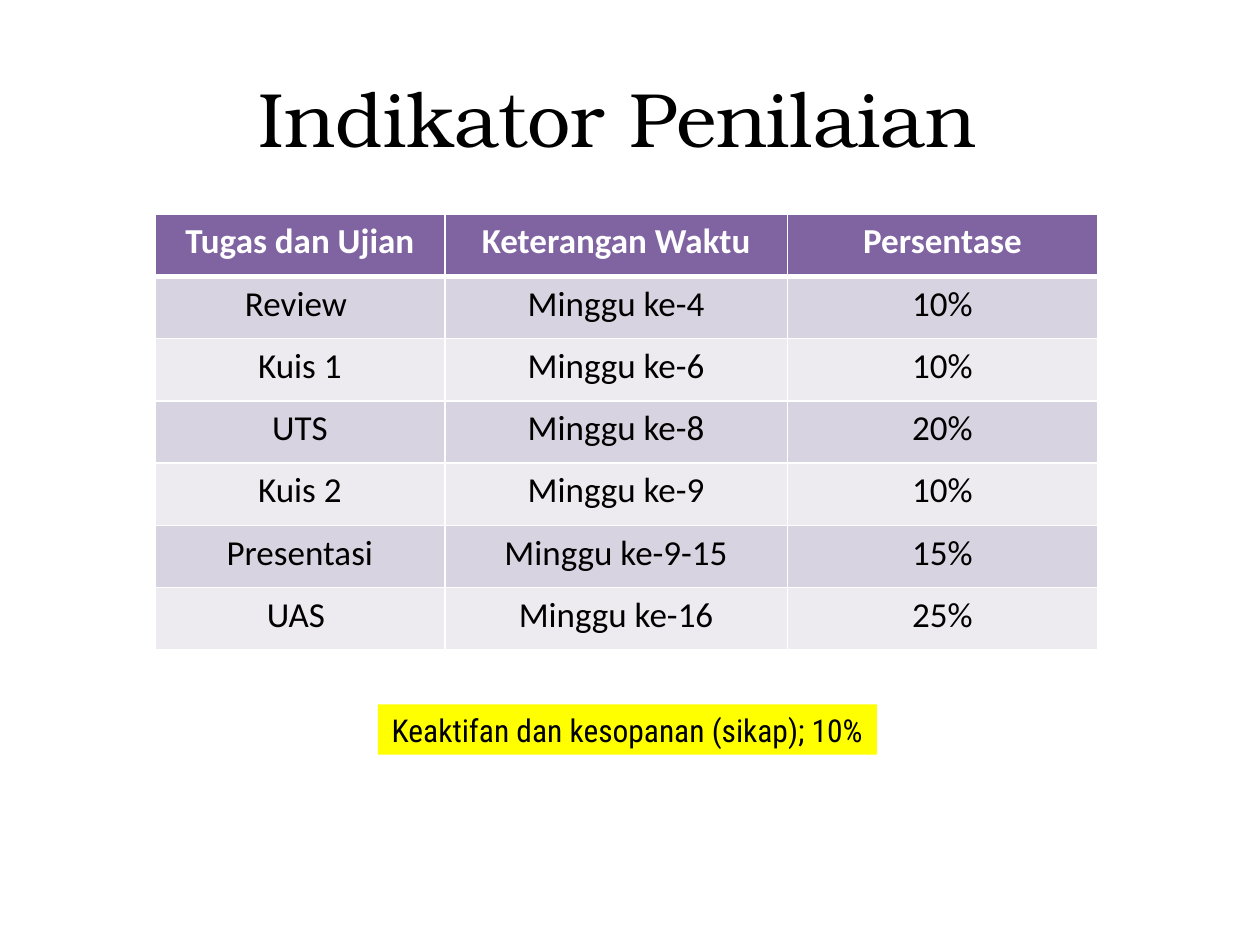
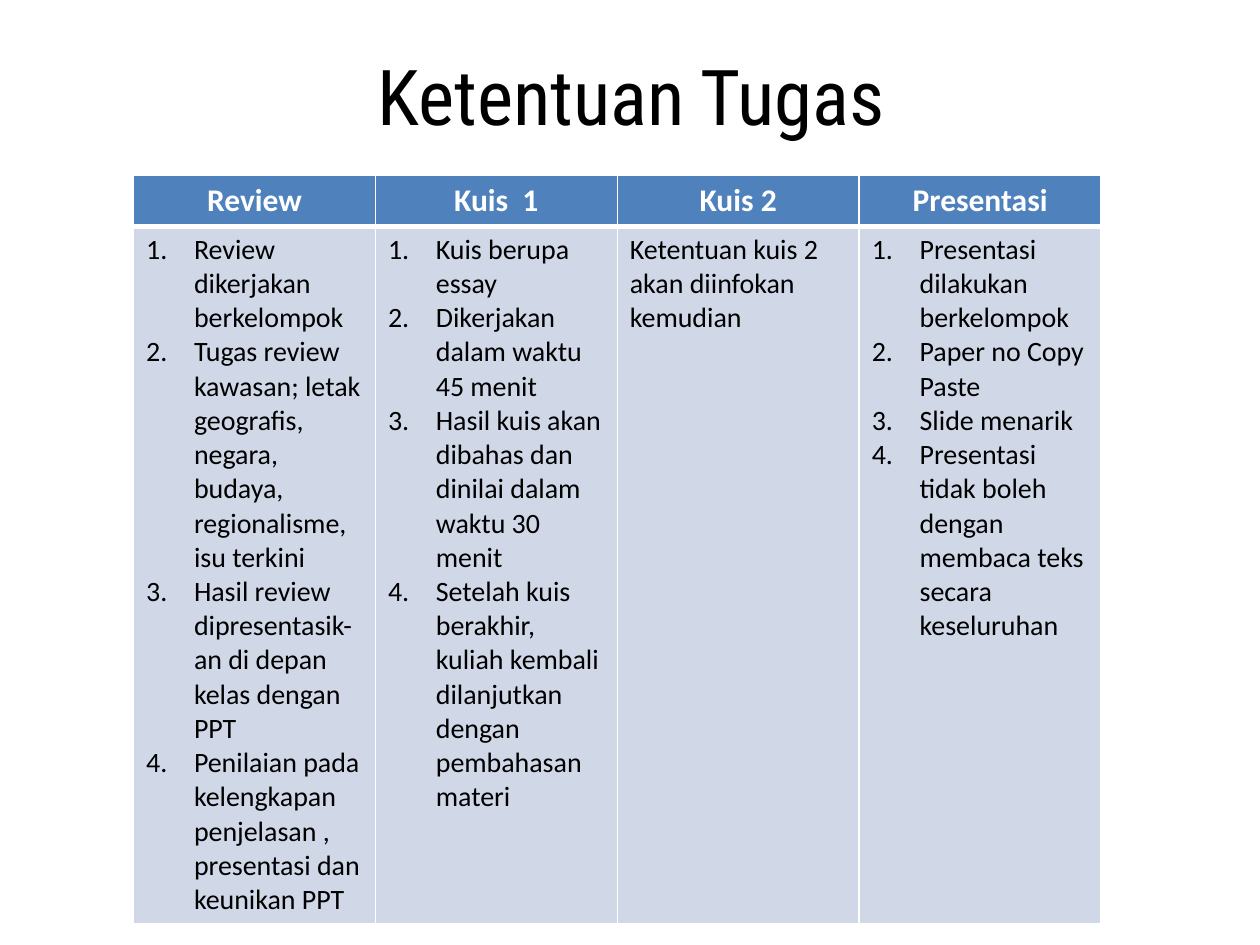
from lxml import etree
from pptx import Presentation
from pptx.dml.color import RGBColor
from pptx.enum.shapes import MSO_SHAPE
from pptx.enum.text import MSO_ANCHOR, MSO_AUTO_SIZE, PP_ALIGN
from pptx.oxml.ns import qn
from pptx.util import Inches, Pt

RECTANGLE = MSO_SHAPE.RECTANGLE
MIDDLE = MSO_ANCHOR.MIDDLE
FIT_SHAPE = MSO_AUTO_SIZE.SHAPE_TO_FIT_TEXT
FIT_NONE = MSO_AUTO_SIZE.NONE
CENTER = PP_ALIGN.CENTER
LEFT = PP_ALIGN.LEFT

COLORS = {
    "text": "000000",
    "white": "FFFFFF",
    "purple": "8064A2",
    "purple_dark_band": "D8D3E0",
    "purple_light_band": "EDEAF0",
    "blue": "4F81BD",
    "blue_band": "D0D8E8",
    "highlight": "FFFF00",
}
SERIF = "TeX Gyre Bonum"
CONDENSED = "Roboto Condensed"
TABLE_FONT = "Calibri"
TITLE_ONLY = 5
LIST_INDENT = 0.38
THIN, THICK = 1, 3

ASSESSMENTS = [
    ("Tugas dan Ujian", "Keterangan Waktu", "Persentase"),
    ("Review ", "Minggu ke-4", "10%"),
    ("Kuis 1", "Minggu ke-6", "10%"),
    ("UTS", "Minggu ke-8", "20%"),
    ("Kuis 2", "Minggu ke-9", "10%"),
    ("Presentasi", "Minggu ke-9-15", "15%"),
    ("UAS ", "Minggu ke-16", "25%"),
]
TASK_RULES = {
    "Review": [
        "Review dikerjakan berkelompok",
        "Tugas review kawasan; letak geografis, negara, budaya, regionalisme, isu terkini",
        "Hasil review dipresentasik-an di depan kelas dengan PPT",
        "Penilaian pada kelengkapan penjelasan , presentasi dan keunikan PPT",
    ],
    "Kuis  1": [
        "Kuis berupa essay",
        "Dikerjakan dalam waktu 45 menit",
        "Hasil kuis akan dibahas dan dinilai dalam waktu 30 menit",
        "Setelah kuis berakhir, kuliah kembali dilanjutkan dengan pembahasan materi",
    ],
    "Kuis 2": ["Ketentuan kuis 2 akan diinfokan kemudian"],
    "Presentasi": [
        "Presentasi dilakukan berkelompok",
        "Paper no Copy Paste",
        "Slide menarik",
        "Presentasi tidak boleh dengan membaca teks secara keseluruhan",
    ],
}


def rgb(name):
    return RGBColor.from_string(COLORS[name])


def number_paragraph(paragraph):
    properties = paragraph._p.get_or_add_pPr()
    properties.set("marL", str(Inches(LIST_INDENT)))
    properties.set("indent", str(-Inches(LIST_INDENT)))
    etree.SubElement(properties, qn("a:buFont"), typeface="+mj-lt")
    etree.SubElement(properties, qn("a:buAutoNum"), type="arabicPeriod")


def write_text(frame, lines, font_name, size, color="text", bold=False,
               alignment=CENTER, numbered=False):
    font_values = {"name": font_name, "size": Pt(size), "bold": bold}
    for index, line in enumerate(lines):
        paragraph = frame.paragraphs[0] if index == 0 else frame.add_paragraph()
        paragraph.alignment = alignment
        if numbered:
            number_paragraph(paragraph)
        run = paragraph.add_run()
        run.text = line
        for attribute, value in font_values.items():
            setattr(run.font, attribute, value)
        run.font.color.rgb = rgb(color)


def set_borders(cell, top, bottom):
    properties = cell._tc.get_or_add_tcPr()
    for side, width in {"L": THIN, "R": THIN, "T": top, "B": bottom}.items():
        line = etree.SubElement(properties, qn(f"a:ln{side}"), w=str(Pt(width)))
        fill = etree.SubElement(line, qn("a:solidFill"))
        etree.SubElement(fill, qn("a:srgbClr"), val=COLORS["white"])


def add_title_slide(presentation, title, box, font_name):
    slide = presentation.slides.add_slide(presentation.slide_layouts[TITLE_ONLY])
    shape = slide.shapes.title
    shape.left, shape.top, shape.width, shape.height = map(Inches, box)
    frame = shape.text_frame
    for attribute, value in {"vertical_anchor": MIDDLE, "word_wrap": True,
                             "auto_size": FIT_NONE}.items():
        setattr(frame, attribute, value)
    write_text(frame, [title], font_name, 44)
    return slide


def add_grid(slide, left, top, column_widths, row_heights, header_fill, band_fills):
    table = slide.shapes.add_table(
        len(row_heights), len(column_widths), Inches(left), Inches(top),
        Inches(sum(column_widths)), Inches(sum(row_heights))).table
    for column, width in zip(table.columns, column_widths):
        column.width = Inches(width)
    for row_index, (row, height) in enumerate(zip(table.rows, row_heights)):
        row.height = Inches(height)
        fill_name = band_fills[(row_index - 1) % len(band_fills)] if row_index else header_fill
        for cell in row.cells:
            set_borders(cell, THICK if row_index == 1 else THIN,
                        THIN if row_index else THICK)
            cell.fill.solid()
            cell.fill.fore_color.rgb = rgb(fill_name)
    return table


def write_header(table, labels, size):
    for cell, label in zip(table.rows[0].cells, labels):
        write_text(cell.text_frame, [label], TABLE_FONT, size, "white", True)


def add_note(slide, text, box):
    shape = slide.shapes.add_shape(RECTANGLE, *map(Inches, box))
    shape.shadow.inherit = False
    shape.fill.solid()
    shape.fill.fore_color.rgb = rgb("highlight")
    shape.line.fill.background()
    shape.text_frame.word_wrap = False
    shape.text_frame.auto_size = FIT_SHAPE
    write_text(shape.text_frame, [text], CONDENSED, 18)


def build_assessment_slide(presentation):
    slide = add_title_slide(presentation, "Indikator Penilaian ", (0.5, 0.3, 9, 1.25), SERIF)
    table = add_grid(slide, 1.23, 1.7, [2.3, 2.72, 2.46], [3.46 / len(ASSESSMENTS)] * len(ASSESSMENTS),
                     "purple", ["purple_dark_band", "purple_light_band"])
    write_header(table, ASSESSMENTS[0], 20)
    for row_index, values in enumerate(ASSESSMENTS[1:], 1):
        for cell, value in zip(table.rows[row_index].cells, values):
            write_text(cell.text_frame, [value], TABLE_FONT, 20)
    add_note(slide, "Keaktifan dan kesopanan (sikap); 10%", (3, 5.59, 3.96, 0.4))


def build_task_rules_slide(presentation):
    slide = add_title_slide(presentation, "Ketentuan Tugas", (0.51, 0.13, 9, 1.25), CONDENSED)
    table = add_grid(slide, 1.06, 1.39, [1.92] * len(TASK_RULES), [0.39, 5.28],
                     "blue", ["blue_band"])
    write_header(table, TASK_RULES, 18)
    for cell, rules in zip(table.rows[1].cells, TASK_RULES.values()):
        write_text(cell.text_frame, rules, TABLE_FONT, 16, alignment=LEFT,
                   numbered=len(rules) > 1)


def main():
    presentation = Presentation()
    presentation.slide_width = Inches(10)
    presentation.slide_height = Inches(7.5)
    build_assessment_slide(presentation)
    build_task_rules_slide(presentation)
    presentation.save("out.pptx")


if __name__ == "__main__":
    main()
